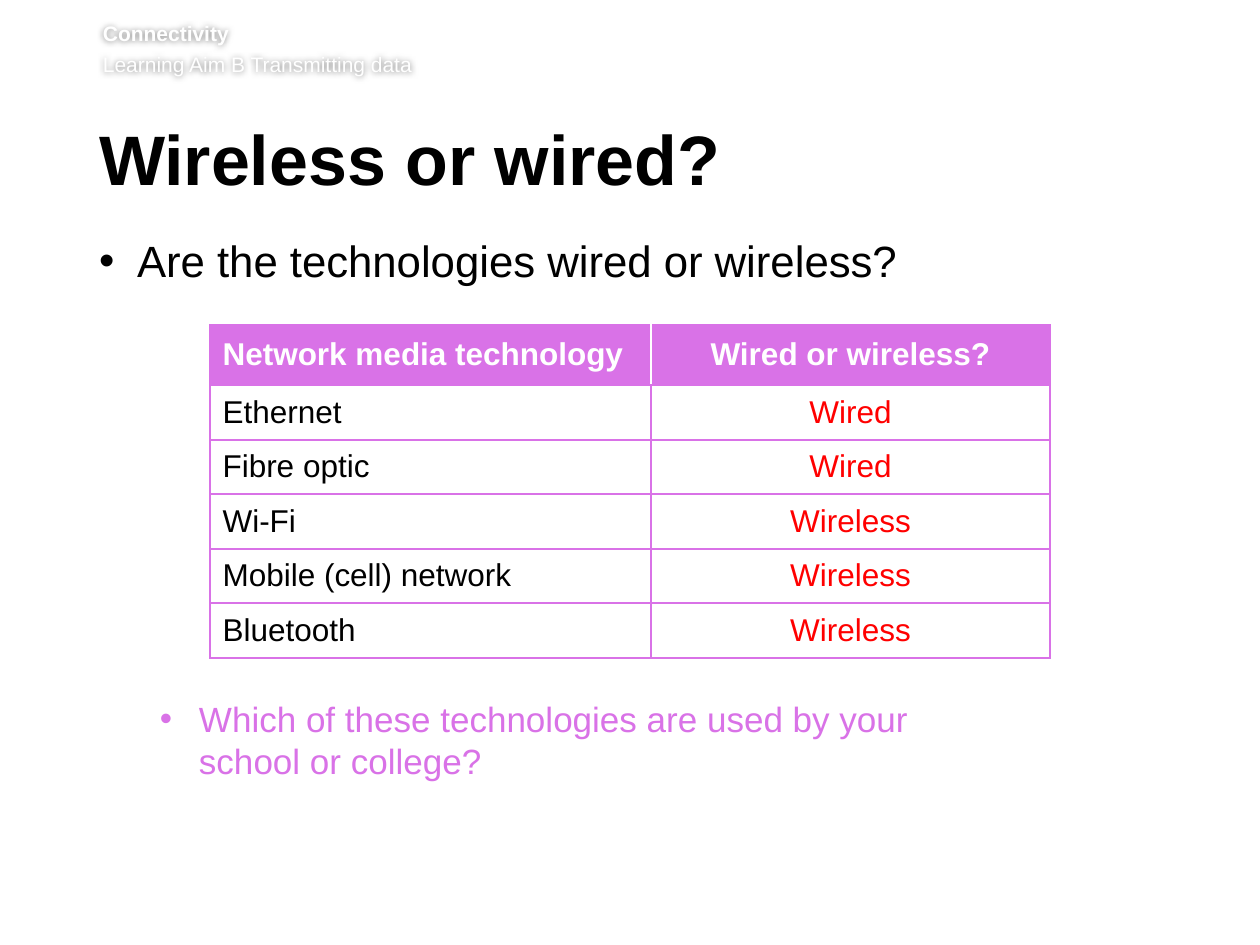
from lxml.etree import SubElement as Sub
from pptx import Presentation
from pptx.dml.color import RGBColor
from pptx.enum.text import MSO_ANCHOR as Anchor, PP_ALIGN as Align
from pptx.oxml.ns import qn
from pptx.util import Pt

SCALE = 914400 / 126
PINK, WHITE, BLACK, RED = "D972E7", "FFFFFF", "000000", "FF0000"
ROWS = [
    ("Network media technology", "Wired or wireless?"),
    ("Ethernet", "Wired"),
    ("Fibre optic", "Wired"),
    ("Wi-Fi", "Wireless"),
    ("Mobile (cell) network", "Wireless"),
    ("Bluetooth", "Wireless"),
]
COLS = (441, 399)
HEIGHTS = (60, 55, 54, 55, 54, 55)


def px(num):
    return round(num * SCALE)


def color(code):
    return RGBColor.from_string(code)


def apply(item, form):
    for key, value in form.items():
        setattr(item, key, value)


def write(para, text, size, tint, bold=False, form=None):
    para.text = text
    apply(para, form or {})
    for run in para.runs:
        apply(run.font, {"name": "Arial", "size": Pt(size), "bold": bold})
        run.font.color.rgb = color(tint)


def add_box(slide, left, top, width, height, inset=0):
    box = slide.shapes.add_textbox(*map(px, (left, top, width, height)))
    apply(box.text_frame, {
        "word_wrap": True,
        "margin_left": 0,
        "margin_top": px(inset),
        "margin_right": px(13),
        "margin_bottom": px(6),
    })
    return box


def add_halo(box):
    effects = Sub(box._element.spPr, qn("a:effectLst"))
    shadow = Sub(effects, qn("a:outerShdw"), blurRad=str(px(7)), dist="0",
                 algn="ctr", rotWithShape="0")
    tint = Sub(shadow, qn("a:srgbClr"), val=BLACK)
    Sub(tint, qn("a:alpha"), val="50000")


def add_bullet(para, indent):
    props = para._p.get_or_add_pPr()
    props.set("marL", str(px(indent)))
    props.set("indent", str(px(-indent)))
    Sub(props, qn("a:buFont"), typeface="Arial")
    Sub(props, qn("a:buChar"), char="•")


def add_border(cell, side, tint):
    line = Sub(cell._tc.get_or_add_tcPr(), qn(f"a:ln{side}"), w=str(Pt(1)))
    fill = Sub(line, qn("a:solidFill"))
    Sub(fill, qn("a:srgbClr"), val=tint)


def fill_cell(cell, row, col, text):
    head = row == 0
    inner = "R" if col == 0 else "L"
    for side in "LRTB":
        add_border(cell, side, WHITE if head and side == inner else PINK)
    if head:
        cell.fill.solid()
        cell.fill.fore_color.rgb = color(PINK)
    else:
        cell.fill.background()
    cell.vertical_anchor = Anchor.MIDDLE
    tint = WHITE if head else (BLACK, RED)[col]
    form = {"alignment": (Align.LEFT, Align.CENTER)[col]}
    write(cell.text_frame.paragraphs[0], text, 18, tint, head, form)


def add_grid(slide, left, top):
    size = (left, top, sum(COLS), sum(HEIGHTS))
    frame = slide.shapes.add_table(len(ROWS), len(COLS), *map(px, size))
    grid = frame.table
    grid.horz_banding = False
    for col, width in zip(grid.columns, COLS):
        col.width = px(width)
    for row, height in zip(grid.rows, HEIGHTS):
        row.height = px(height)
    for row, texts in enumerate(ROWS):
        for col, text in enumerate(texts):
            fill_cell(grid.cell(row, col), row, col, text)


def add_header(slide):
    box = add_box(slide, 103, 21, 1111, 62)
    add_halo(box)
    frame = box.text_frame
    write(frame.paragraphs[0], "Connectivity", 12, WHITE, True)
    write(frame.add_paragraph(), "Learning Aim B Transmitting data", 12,
          WHITE, form={"space_before": Pt(2.9)})


def add_title(slide, text):
    box = add_box(slide, 99, 125, 1077, 92, 6)
    write(box.text_frame.paragraphs[0], text, 40, BLACK, True,
          {"line_spacing": Pt(39)})


def add_point(slide, place, text, size, tint, indent, form=None):
    para = add_box(slide, *place).text_frame.paragraphs[0]
    add_bullet(para, indent)
    write(para, text, size, tint, form=form)


def main():
    deck = Presentation()
    apply(deck, {"slide_width": px(1260), "slide_height": px(945)})
    slide = deck.slides.add_slide(deck.slide_layouts[6])
    add_header(slide)
    add_title(slide, "Wireless or wired?")
    add_point(slide, (99, 234, 1075, 60),
              "Are the technologies wired or wireless?", 25, BLACK, 38)
    add_grid(slide, 210, 325)
    add_point(slide, (160, 697, 1014, 96),
              "Which of these technologies are used by your \vschool or college?",
              20, PINK, 39, {"line_spacing": Pt(24)})
    deck.save("out.pptx")


if __name__ == "__main__":
    main()
